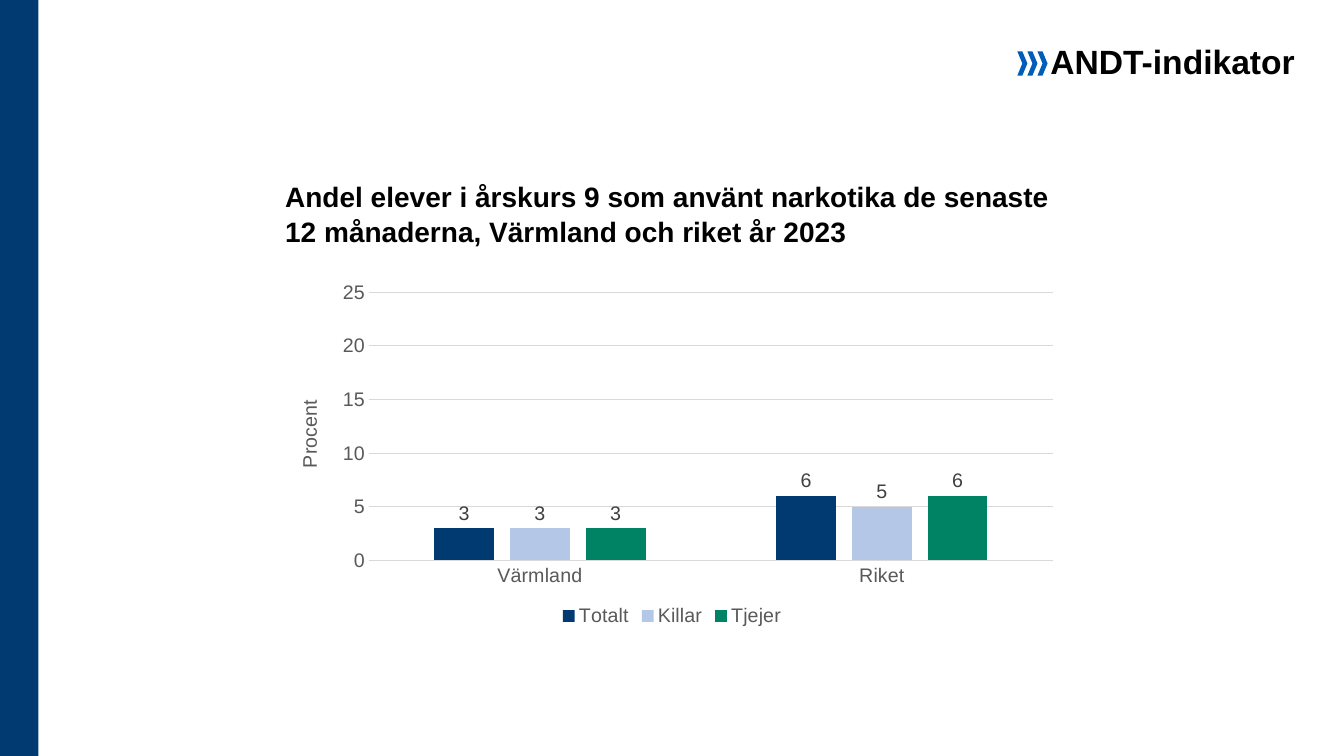
"""Build a slide on drug use among ninth graders in Värmland and Sweden."""
from dataclasses import dataclass

from pptx import Presentation
from pptx.chart.data import CategoryChartData
from pptx.dml.color import RGBColor
from pptx.enum.chart import XL_CHART_TYPE, XL_LABEL_POSITION, XL_LEGEND_POSITION, XL_TICK_MARK
from pptx.enum.shapes import MSO_SHAPE
from pptx.enum.text import MSO_ANCHOR, PP_ALIGN
from pptx.util import Inches, Pt

CLUSTERED = XL_CHART_TYPE.COLUMN_CLUSTERED
OUTSIDE_END = XL_LABEL_POSITION.OUTSIDE_END
LEGEND_BOTTOM = XL_LEGEND_POSITION.BOTTOM
NO_TICK = XL_TICK_MARK.NONE
RECTANGLE = MSO_SHAPE.RECTANGLE
CHEVRON = MSO_SHAPE.CHEVRON
TOP, BOTTOM = MSO_ANCHOR.TOP, MSO_ANCHOR.BOTTOM
LEFT, CENTER = PP_ALIGN.LEFT, PP_ALIGN.CENTER

FONT = "Arial"
NAVY, BLUE, BLACK = "003A70", "005EB8", "000000"
AXIS_GREY, LABEL_GREY, GRID_GREY = "595959", "404040", "D9D9D9"


@dataclass(frozen=True)
class Box:
    left: float
    top: float
    width: float
    height: float

    def lengths(self) -> tuple:
        return tuple(Inches(v) for v in (self.left, self.top, self.width, self.height))


@dataclass(frozen=True)
class Heading:
    text: str
    box: Box
    size: int
    anchor: MSO_ANCHOR
    align: PP_ALIGN
    side_inset: float
    line_spacing: float


@dataclass(frozen=True)
class PupilGroup:
    name: str
    percents: tuple[int, ...]
    color: str


REGIONS = ("Värmland", "Riket")
GROUPS = (
    PupilGroup("Totalt", (3, 6), NAVY),
    PupilGroup("Killar", (3, 5), "B4C7E7"),
    PupilGroup("Tjejer", (3, 6), "008264"),
)
HEADINGS = (
    Heading(
        "Andel elever i årskurs 9 som använt narkotika de senaste "
        "12 månaderna, Värmland och riket år 2023",
        Box(2.73, 1.06, 7.87, 1.45), 20, BOTTOM, LEFT, 0.1, 1.05,
    ),
    Heading("ANDT-indikator", Box(10.31, 0.36, 2.64, 0.38), 24, TOP, CENTER, 0, 1.0),
)
SIDEBAR = Box(0, 0, 0.38, 7.5)
CHEVRONS = tuple(Box(10.09 + 0.1 * i, 0.51, 0.1, 0.24) for i in range(3))
CHART = Box(2.73, 2.72, 7.87, 3.54)


def rgb(color: str) -> RGBColor:
    return RGBColor.from_string(color)


def style_font(font, size: int, color: str, bold: bool = False) -> None:
    font.name = FONT
    font.size = Pt(size)
    font.bold = bold
    font.color.rgb = rgb(color)


def style_line(line) -> None:
    line.color.rgb = rgb(GRID_GREY)
    line.width = Pt(0.75)


def draw_shape(shapes, preset: MSO_SHAPE, box: Box, color: str) -> None:
    shape = shapes.add_shape(preset, *box.lengths())
    shape.shadow.inherit = False
    shape.fill.solid()
    shape.fill.fore_color.rgb = rgb(color)
    shape.line.fill.background()


def draw_heading(shapes, heading: Heading) -> None:
    frame = shapes.add_textbox(*heading.box.lengths()).text_frame
    frame.word_wrap = True
    frame.vertical_anchor = heading.anchor
    frame.margin_left = frame.margin_right = Inches(heading.side_inset)
    paragraph = frame.paragraphs[0]
    paragraph.alignment = heading.align
    paragraph.line_spacing = heading.line_spacing
    run = paragraph.add_run()
    run.text = heading.text
    style_font(run.font, heading.size, BLACK, bold=True)


def draw_chart(shapes) -> None:
    data = CategoryChartData(number_format="0")
    data.categories = REGIONS
    for group in GROUPS:
        data.add_series(group.name, group.percents)
    chart = shapes.add_chart(CLUSTERED, *CHART.lengths(), data).chart
    style_font(chart.font, 14, BLACK)
    chart.has_title = False
    chart.has_legend = True
    chart.legend.position = LEGEND_BOTTOM
    chart.legend.include_in_layout = False
    style_font(chart.legend.font, 14, AXIS_GREY)

    for axis in (chart.category_axis, chart.value_axis):
        axis.major_tick_mark = axis.minor_tick_mark = NO_TICK
        style_font(axis.tick_labels.font, 14, AXIS_GREY)
    style_line(chart.category_axis.format.line)

    percent_axis = chart.value_axis
    percent_axis.minimum_scale, percent_axis.maximum_scale = 0, 25
    percent_axis.major_unit = 5
    percent_axis.tick_labels.number_format = "0"
    percent_axis.tick_labels.number_format_is_linked = False
    percent_axis.format.line.fill.background()
    style_line(percent_axis.major_gridlines.format.line)
    percent_title = percent_axis.axis_title.text_frame.paragraphs[0].add_run()
    percent_title.text = "Procent"
    style_font(percent_title.font, 14, AXIS_GREY)

    plot = chart.plots[0]
    plot.vary_by_categories = False
    plot.gap_width, plot.overlap = 219, -27
    for series, group in zip(plot.series, GROUPS):
        series.format.fill.solid()
        series.format.fill.fore_color.rgb = rgb(group.color)
        series.invert_if_negative = False
        labels = series.data_labels
        labels.show_value = True
        labels.position = OUTSIDE_END
        labels.number_format = "0"
        labels.number_format_is_linked = False
        style_font(labels.font, 14, LABEL_GREY)


def main() -> None:
    deck = Presentation()
    deck.slide_width, deck.slide_height = Inches(13.33), Inches(7.5)
    shapes = deck.slides.add_slide(deck.slide_layouts[6]).shapes
    draw_shape(shapes, RECTANGLE, SIDEBAR, NAVY)
    for heading in HEADINGS:
        draw_heading(shapes, heading)
    chevrons = shapes.add_group_shape().shapes
    for box in CHEVRONS:
        draw_shape(chevrons, CHEVRON, box, BLUE)
    draw_chart(shapes)
    deck.save("out.pptx")


if __name__ == "__main__":
    main()
